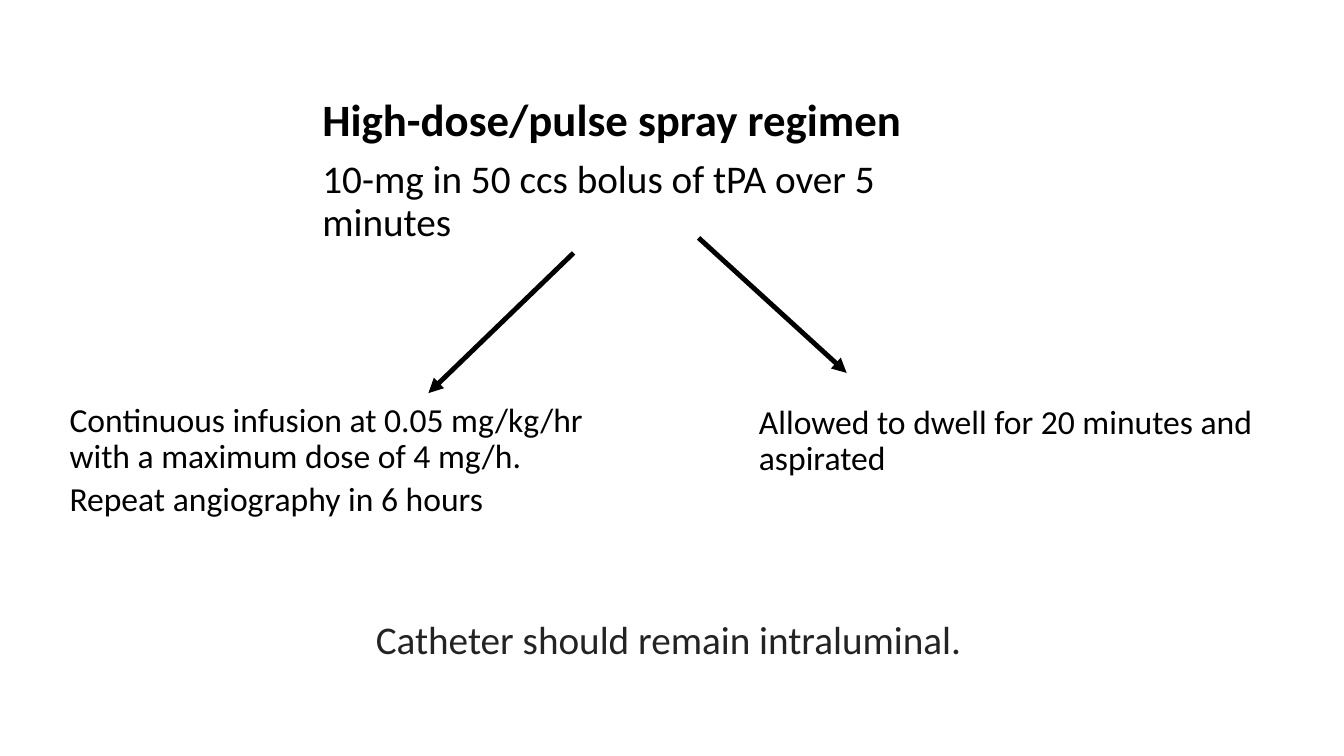
from pptx import Presentation
from pptx.dml.color import RGBColor
from pptx.enum import shapes, text
from pptx.oxml import ns, xmlchemy
from pptx.util import Pt

FONT = "Calibri"
BLACK = "000000"
GREY = "232323"


def rgb(value):
    return RGBColor.from_string(value)


def place(sp, left, top, width, height):
    sp.left, sp.top, sp.width, sp.height = map(Pt, (left, top, width, height))


def add_box(s, left, top, width, height):
    return s.shapes.add_textbox(*map(Pt, (left, top, width, height)))


def write(sp, lines, level=0, before=0, spacing=1.0, color=BLACK, wrap=True):
    """Fill a text shape; each line is (wording, size, bold)."""
    tf = sp.text_frame
    tf.word_wrap = wrap
    tf.auto_size = text.MSO_AUTO_SIZE.NONE
    tf.vertical_anchor = text.MSO_ANCHOR.TOP
    for i, (wording, size, bold) in enumerate(lines):
        p = tf.add_paragraph() if i else tf.paragraphs[0]
        p.level = level
        p.alignment = text.PP_ALIGN.LEFT
        p.line_spacing = spacing
        p.space_before = Pt(before)
        # Indent by level, without a bullet
        pPr = p._p.get_or_add_pPr()
        pPr.set("marL", str(Pt(36 * level)))
        pPr.set("indent", "0")
        pPr.append(xmlchemy.OxmlElement("a:buNone"))
        r = p.add_run()
        r.text = wording
        r.font.name = FONT
        r.font.size = Pt(size)
        r.font.bold = bold
        r.font.color.rgb = rgb(color)


def add_arrow(s, x1, y1, x2, y2):
    line = s.shapes.add_connector(
        shapes.MSO_CONNECTOR.STRAIGHT, Pt(x1), Pt(y1), Pt(x2), Pt(y2))
    line.line.color.rgb = rgb(BLACK)
    line.line.width = Pt(3.5)
    # Arrowhead at the end, no shadow
    tail = xmlchemy.OxmlElement("a:tailEnd")
    tail.set("type", "triangle")
    spPr = line._element.spPr
    spPr.find(ns.qn("a:ln")).append(tail)
    spPr.append(xmlchemy.OxmlElement("a:effectLst"))


def main():
    prs = Presentation()
    prs.slide_width, prs.slide_height = Pt(960), Pt(540)
    s = prs.slides.add_slide(prs.slide_layouts[1])
    title = s.shapes.title._element
    title.getparent().remove(title)

    # Left branch: infusion
    infusion = s.placeholders[1]
    place(infusion, 6.5, 284.4, 419, 110.9)
    write(infusion, [
        ("Continuous infusion at 0.05 mg/kg/hr with a maximum dose of 4 mg/h. ", 24, False),
        ("Repeat angiography in 6 hours", 24, False),
    ], level=1, before=5, spacing=0.9)

    # Right branch: dwell
    write(add_box(s, 499, 285.8, 445, 136.1), [
        ("Allowed to dwell for 20 minutes and aspirated", 24, False),
    ], level=1, before=5, spacing=0.9)

    # Regimen
    write(add_box(s, 223.2, 66.2, 445, 114.5), [
        ("High-dose/pulse spray regimen", 32, True),
        ("10-mg in 50 ccs bolus of tPA over 5 minutes", 28, False),
    ], before=10, spacing=0.9)

    # Arrows to the branches
    add_arrow(s, 409.7, 180.7, 306, 280.8)
    add_arrow(s, 499, 169.9, 604.8, 266.4)

    # Closing remark
    write(add_box(s, 261.4, 436.3, 437, 41), [
        ("Catheter should remain intraluminal.", 28, False),
    ], color=GREY, wrap=False)

    prs.save("out.pptx")


if __name__ == "__main__":
    main()
